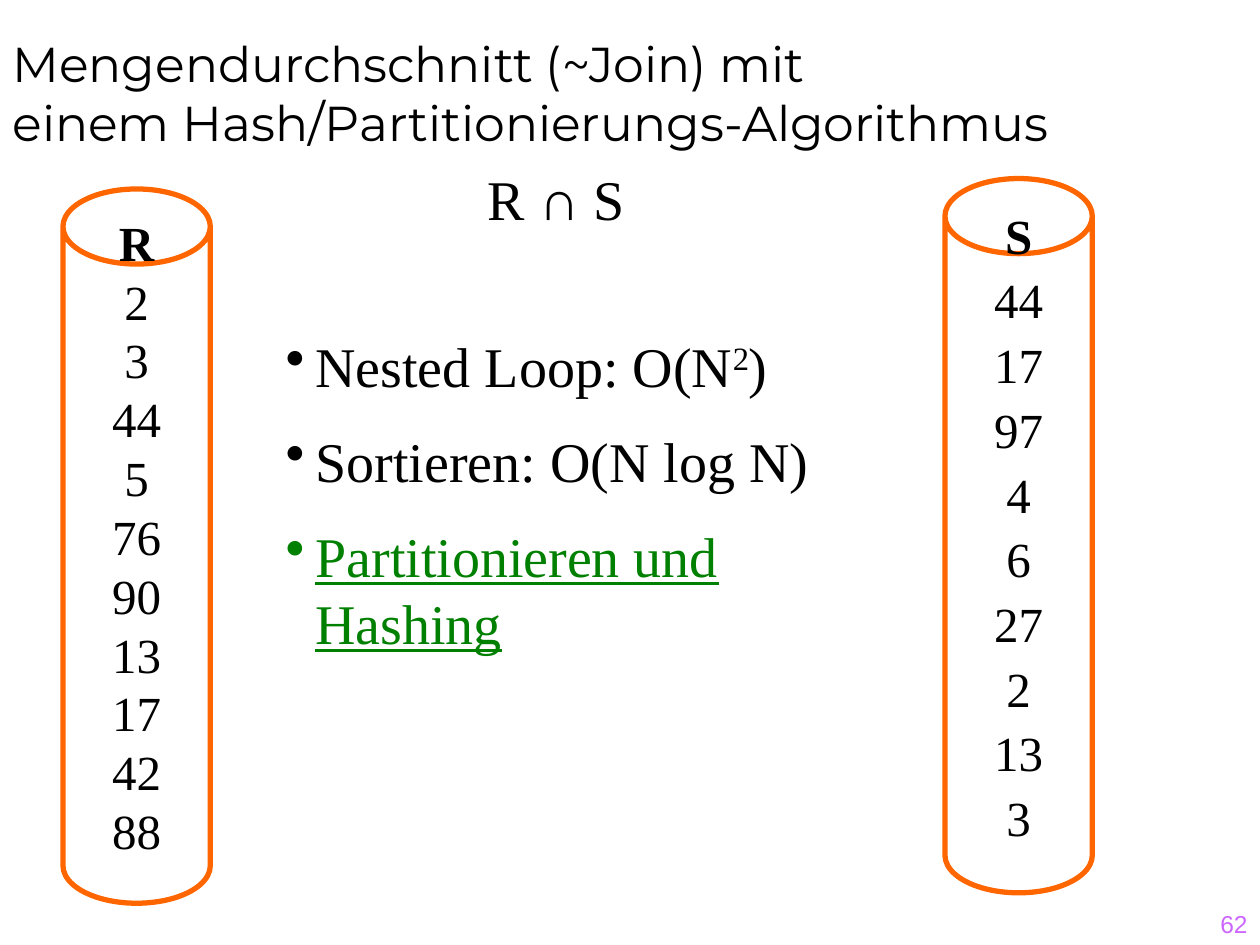
import pptx
import pptx.util
import pptx.dml.color
import pptx.enum.shapes
import pptx.enum.text
import pptx.oxml
import pptx.oxml.ns
from pptx.util import Cm

theme = {
    "head": "Montserrat", "body": "Times New Roman", "foot": "Arial",
    "ink": "000000", "paper": "FFFFFF", "rim": "FF6600",
    "green": "008000", "violet": "CC66FF",
    "big": 32, "mid": 28, "small": 14, "rim_w": 3,
}
align = pptx.enum.text.PP_ALIGN
anchor = pptx.enum.text.MSO_ANCHOR
fit = pptx.enum.text.MSO_AUTO_SIZE


def rgb(name):
    return pptx.dml.color.RGBColor.from_string(theme[name])


def write(para, text, face="body", size="mid", ink="ink"):
    run = para.add_run()
    run.text = text
    run.font.name = theme[face]
    run.font.size = pptx.util.Pt(theme[size])
    run.font.color.rgb = rgb(ink)
    return run


deck = pptx.Presentation()
deck.slide_width, deck.slide_height = Cm(25.4), Cm(19.05)
slide = deck.slides.add_slide(deck.slide_layouts[5])
shapes = slide.shapes

# Title
title = shapes.title
title.left, title.top, title.width, title.height = Cm(0), Cm(0), Cm(25.4), Cm(3.18)
frame = title.text_frame
frame.auto_size = fit.NONE
frame.vertical_anchor = anchor.BOTTOM
para = frame.paragraphs[0]
para.alignment = align.LEFT
write(para, "Mengendurchschnitt (~Join) mit ", "head")
para.add_line_break()
write(para, "einem Hash/Partitionierungs-Algorithmus", "head")

# Relations R and S: left, top, line spacing, room below the text, entries
cans = [
    (1.27, 3.81, 1.0, 1.3, ["R", 2, 3, 44, 5, 76, 90, 13, 17, 42, 88]),
    (19.05, 3.6, 1.1, 1.4, ["S", 44, 17, 97, 4, 6, 27, 2, 13, 3]),
]
for left, top, pitch, room, items in cans:
    can = shapes.add_shape(pptx.enum.shapes.MSO_SHAPE.CAN,
                           Cm(left), Cm(top), Cm(2.97), Cm(14.4))
    can.adjustments[0] = 0.51
    can.shadow.inherit = False
    can.fill.solid()
    can.fill.fore_color.rgb = rgb("paper")
    can.line.color.rgb = rgb("rim")
    can.line.width = pptx.util.Pt(theme["rim_w"])
    frame = can.text_frame
    frame.word_wrap = False
    frame.vertical_anchor = anchor.MIDDLE
    frame.margin_bottom = Cm(room)
    for i, item in enumerate(items):
        para = frame.add_paragraph() if i else frame.paragraphs[0]
        para.alignment = align.CENTER
        para.line_spacing = pitch
        write(para, str(item)).font.bold = i == 0

# Intersection
box = shapes.add_textbox(Cm(9.55), Cm(3.2), Cm(3.33), Cm(1.6))
box.text_frame.word_wrap = False
para = box.text_frame.paragraphs[0]
para.alignment = align.CENTER
write(para, "R ∩ S", size="big")

# Methods: each bullet is a list of (text, kind)
points = [
    [("Nested Loop: O(N", ""), ("2", "super"), (")", "")],
    [("Sortieren: O(N log N)", "")],
    [("Partitionieren und Hashing", "key")],
]
box = shapes.add_textbox(Cm(5.51), Cm(6.55), Cm(13.13), Cm(7.7))
frame = box.text_frame
frame.word_wrap = True
for i, parts in enumerate(points):
    para = frame.add_paragraph() if i else frame.paragraphs[0]
    props = para._p.get_or_add_pPr()
    props.set("marL", str(Cm(0.6)))
    props.set("indent", str(Cm(-0.6)))
    dot = pptx.oxml.parse_xml(
        f'<a:buChar {pptx.oxml.ns.nsdecls("a")} char="•"/>')
    props.append(dot)
    if i:
        para.space_before = pptx.util.Pt(theme["big"] / 2)
    for text, kind in parts:
        run = write(para, text, size="big", ink="green" if kind == "key" else "ink")
        if kind == "key":
            run.font.underline = True
        if kind == "super":
            run._r.get_or_add_rPr().set("baseline", "30000")

# Page number
box = shapes.add_textbox(Cm(20.12), Cm(17.78), Cm(5.28), Cm(1.27))
frame = box.text_frame
frame.word_wrap = True
frame.vertical_anchor = anchor.BOTTOM
para = frame.paragraphs[0]
para.alignment = align.RIGHT
write(para, "62", "foot", "small", "violet")

deck.save("out.pptx")
